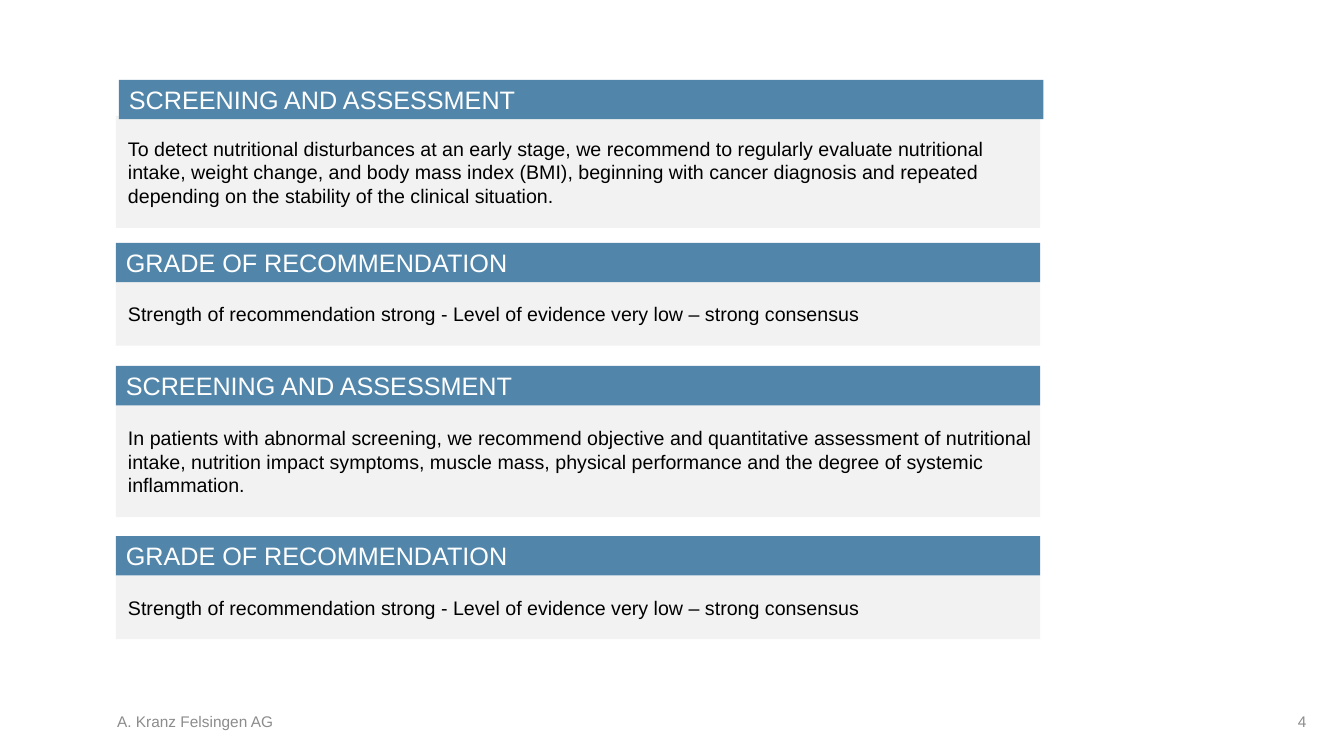
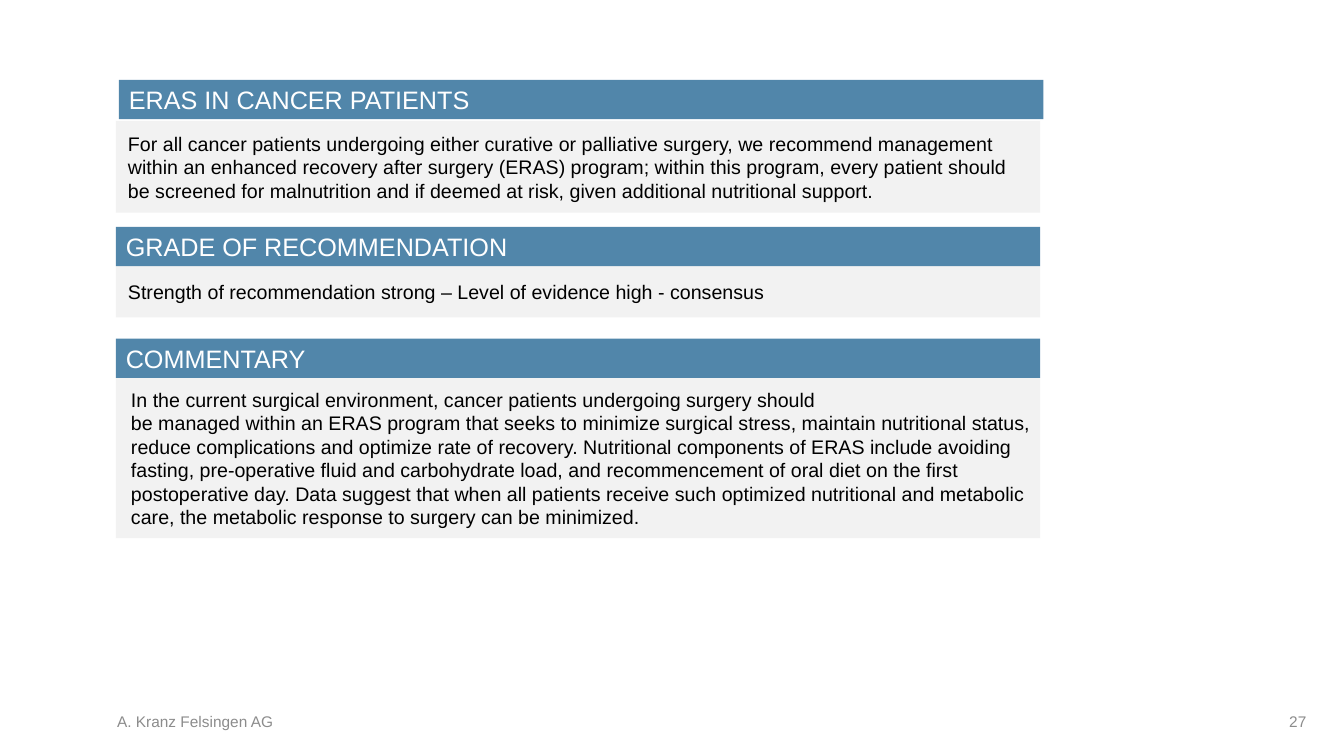
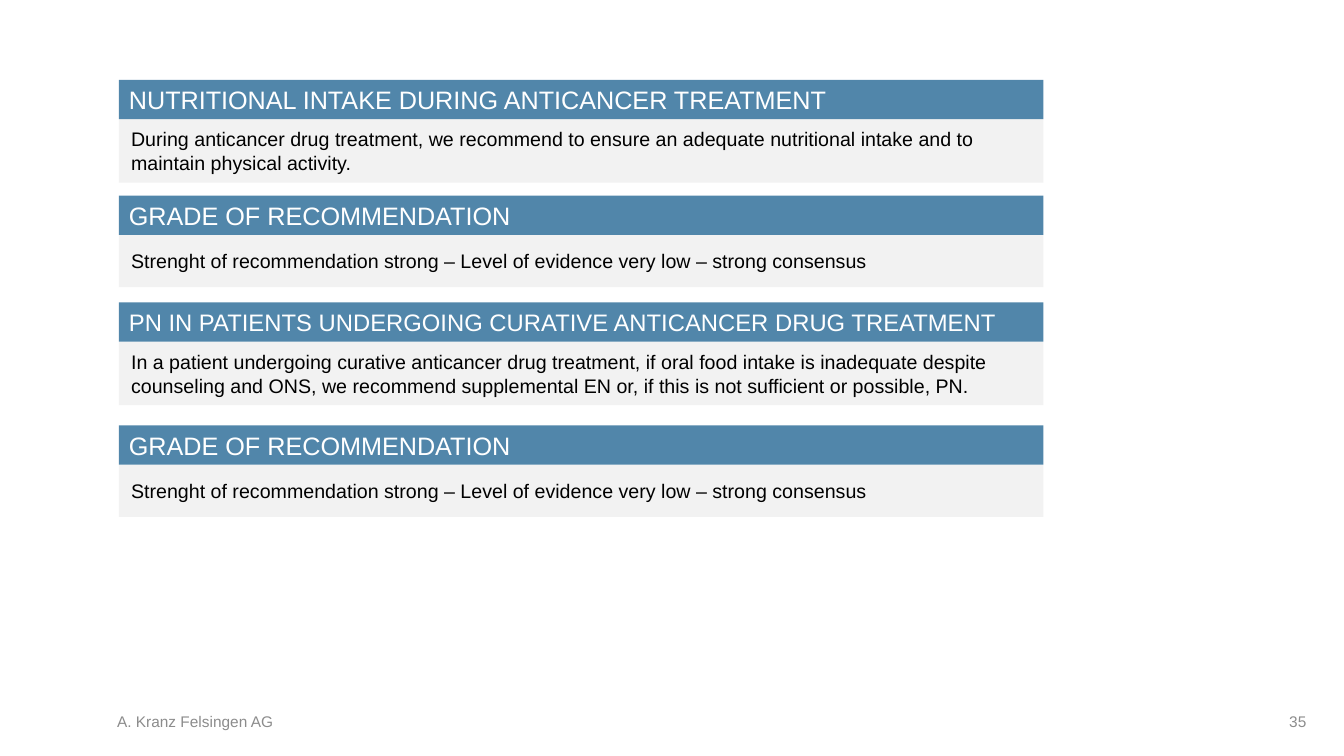
from pptx import Presentation
from pptx.dml.color import RGBColor
from pptx.enum.shapes import MSO_SHAPE as Preset
from pptx.enum.text import MSO_ANCHOR as Anchor, PP_ALIGN as Align
from pptx.util import Pt

COLORS = {
    "band": "5186AA",
    "panel": "F2F2F2",
    "title": "FFFFFF",
    "body": "000000",
    "footer": "8C8C8C",
}
LEFT = 82.8
SHIFTED_LEFT = 85
FIRST_TOP = 57


class Deck:
    font = "Arial"
    band_width = 660.24
    band_height = 28.08
    text_inset = 8.64
    footer_text = "A. Kranz Felsingen AG"

    def __init__(self):
        self.presentation = Presentation()
        self.presentation.slide_width = Pt(960)
        self.presentation.slide_height = Pt(540)
        self.slide = None

    def add_slide(self, number):
        blank = self.presentation.slide_layouts[6]
        self.slide = self.presentation.slides.add_slide(blank)
        self.footer(75, 294.5, self.footer_text, Align.LEFT)
        self.footer(717.8, 224, str(number), Align.RIGHT)

    def set_text(self, shape, text, size, color, insets, align=Align.LEFT):
        frame = shape.text_frame
        frame.word_wrap = True
        frame.vertical_anchor = Anchor.MIDDLE
        frame.margin_left, frame.margin_right = (Pt(inset) for inset in insets)
        frame.margin_top = frame.margin_bottom = 0
        paragraph = frame.paragraphs[0]
        paragraph.text = text
        paragraph.alignment = align
        paragraph.font.name = self.font
        paragraph.font.size = Pt(size)
        paragraph.font.color.rgb = RGBColor.from_string(COLORS[color])

    def footer(self, left, width, text, align):
        box = self.slide.shapes.add_textbox(Pt(left), Pt(502.6), Pt(width), Pt(25.2))
        self.set_text(box, text, 11, "footer", (self.text_inset, self.text_inset), align)

    def rectangle(self, left, top, height, fill):
        shape = self.slide.shapes.add_shape(
            Preset.RECTANGLE, Pt(left), Pt(top), Pt(self.band_width), Pt(height))
        shape.shadow.inherit = False
        shape.fill.solid()
        shape.fill.fore_color.rgb = RGBColor.from_string(COLORS[fill])
        shape.line.fill.background()
        return shape

    def section(self, top, title, body, height, left=LEFT, title_left=None,
                body_top=None, title_size=18, inset=text_inset):
        panel_top = body_top or top + self.band_height
        panel = self.rectangle(left, panel_top, height, "panel")
        self.set_text(panel, body, 14, "body", (inset, 0))
        band = self.rectangle(title_left or left, top, self.band_height, "band")
        self.set_text(band, title, title_size, "title", (7.2, 7.2))


def main():
    screening = "SCREENING AND ASSESSMENT"
    grade = "GRADE OF RECOMMENDATION"
    deck = Deck()

    deck.add_slide(4)
    strong = ("Strength of recommendation strong - Level of evidence very low "
              "– strong consensus")
    deck.section(
        FIRST_TOP, screening,
        "To detect nutritional disturbances at an early stage, we recommend to "
        "regularly evaluate nutritional intake, weight change, and body mass index "
        "(BMI), beginning with cancer diagnosis and repeated depending on the "
        "stability of the clinical situation.",
        80, title_left=SHIFTED_LEFT, body_top=82.8)
    deck.section(173.5, grade, strong, 45.4)
    deck.section(
        261.4, screening,
        "In patients with abnormal screening, we recommend objective and "
        "quantitative assessment of nutritional intake, nutrition impact symptoms, "
        "muscle mass, physical performance and the degree of systemic inflammation.",
        80)
    deck.section(383, grade, strong, 45.4)

    deck.add_slide(27)
    deck.section(
        FIRST_TOP, "ERAS IN CANCER PATIENTS",
        "For all cancer patients undergoing either curative or palliative surgery, "
        "we recommend management within an enhanced recovery after surgery (ERAS) "
        "program; within this program, every patient should\n"
        "be screened for malnutrition and if deemed at risk, given additional "
        "nutritional support.",
        65.5, title_left=SHIFTED_LEFT, body_top=86.4)
    deck.section(
        162, grade,
        "Strength of recommendation strong – Level of evidence high - consensus", 36.7)
    deck.section(
        241.9, "COMMENTARY",
        "In the current surgical environment, cancer patients undergoing surgery "
        "should\n"
        "be managed within an ERAS program that seeks to minimize surgical stress, "
        "maintain nutritional status, reduce complications and optimize rate of "
        "recovery. Nutritional components of ERAS include avoiding fasting, "
        "pre-operative fluid and carbohydrate load, and recommencement of oral diet "
        "on the first postoperative day. Data suggest that when all patients receive "
        "such optimized nutritional and metabolic care, the metabolic response to "
        "surgery can be minimized.",
        114.5, inset=10.8)

    deck.add_slide(35)
    strong = ("Strenght of recommendation strong – Level of evidence very low "
              "– strong consensus")
    deck.section(
        FIRST_TOP, "NUTRITIONAL INTAKE DURING ANTICANCER TREATMENT",
        "During anticancer drug treatment, we recommend to ensure an adequate "
        "nutritional intake and to maintain physical activity.",
        45.4, left=SHIFTED_LEFT)
    deck.section(139.7, grade, strong, 37.4, left=SHIFTED_LEFT)
    deck.section(
        216, "PN IN PATIENTS UNDERGOING CURATIVE ANTICANCER DRUG TREATMENT",
        "In a patient undergoing curative anticancer drug treatment, if oral food "
        "intake is inadequate despite counseling and ONS, we recommend supplemental "
        "EN or, if this is not sufficient or possible, PN.",
        45.4, left=SHIFTED_LEFT, title_size=17)
    deck.section(303.8, grade, strong, 37.4, left=SHIFTED_LEFT)

    deck.presentation.save("out.pptx")


if __name__ == "__main__":
    main()
